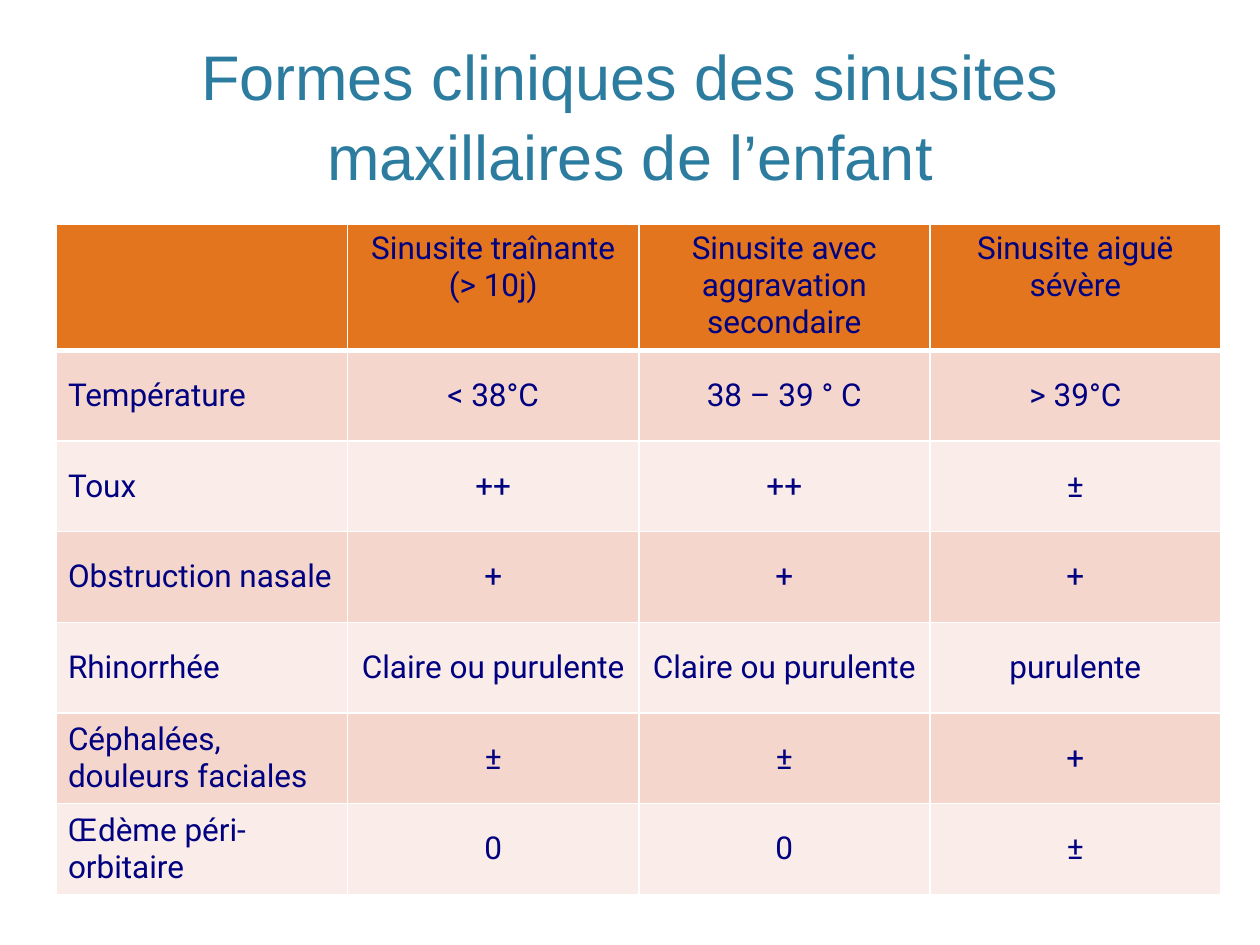
from lxml import etree
from pptx import Presentation
from pptx import util as u
from pptx.dml.color import RGBColor
from pptx.enum import text
from pptx.oxml.ns import qn

TITLE_BLUE, NAVY, WHITE = "2C7C9F", "000080", "FFFFFF"
HEADER_ORANGE = "E2751D"
BAND_FILLS = ["F4D6CD", "FAECE8"]

HEADERS = ["", "Sinusite traînante\n(> 10j)",
           "Sinusite avec aggravation secondaire", "Sinusite aiguë sévère"]
SIGNS = [
    ["Température", "< 38°C", "38 – 39 ° C", "> 39°C"],
    ["Toux", "++", "++", "±"],
    ["Obstruction nasale", "+", "+", "+"],
    ["Rhinorrhée", "Claire ou purulente", "Claire ou purulente", "purulente"],
    ["Céphalées, douleurs faciales", "±", "±", "+"],
    ["Œdème péri-orbitaire", "0", "0", "±"],
]
COLUMN_WIDTH, HEADER_HEIGHT, ROW_HEIGHT = 2.31, 1, 0.72


def color(hex_string):
    return RGBColor.from_string(hex_string)


def add_run(paragraph, words, size, font_name, hex_string):
    run = paragraph.add_run()
    run.text = words
    run.font.size = u.Pt(size)
    run.font.name = font_name
    run.font.color.rgb = color(hex_string)


def add_title(slide, words):
    title = slide.shapes.title
    title.left, title.top = u.Inches(0.6), u.Inches(0.12)
    title.width, title.height = u.Inches(8.8), u.Inches(1.46)
    frame = title.text_frame
    frame.word_wrap = True
    frame.auto_size = text.MSO_AUTO_SIZE.NONE
    frame.vertical_anchor = text.MSO_ANCHOR.BOTTOM
    paragraph = frame.paragraphs[0]
    paragraph.alignment = text.PP_ALIGN.CENTER
    paragraph.line_spacing = 1.05
    add_run(paragraph, words, 36, "Arial", TITLE_BLUE)


def set_borders(cell, bottom_width):
    """Draw white borders, 1 pt except for the bottom one."""
    properties = cell._tc.get_or_add_tcPr()
    widths = {"a:lnL": 1, "a:lnR": 1, "a:lnT": 1, "a:lnB": bottom_width}
    for position, (tag, width) in enumerate(widths.items()):
        line = etree.Element(qn(tag), w=str(u.Pt(width)))
        fill = etree.SubElement(line, qn("a:solidFill"))
        etree.SubElement(fill, qn("a:srgbClr"), val=WHITE)
        properties.insert(position, line)


def fill_cell(cell, words, fill, is_header, alignment):
    cell.fill.solid()
    cell.fill.fore_color.rgb = color(fill)
    set_borders(cell, 3 if is_header else 1)
    cell.margin_left = cell.margin_right = u.Inches(0.09)
    cell.margin_top = cell.margin_bottom = u.Inches(0.05)
    anchors = text.MSO_ANCHOR
    cell.vertical_anchor = anchors.TOP if is_header else anchors.MIDDLE
    frame = cell.text_frame
    for index, line in enumerate(words.split("\n")):
        paragraph = frame.add_paragraph() if index else frame.paragraphs[0]
        paragraph.alignment = alignment
        if line:
            add_run(paragraph, line, 18, "Roboto", NAVY)


def add_signs_table(slide):
    rows = [HEADERS] + SIGNS
    height = HEADER_HEIGHT + ROW_HEIGHT * len(SIGNS)
    table = slide.shapes.add_table(
        len(rows), len(HEADERS), u.Inches(0.45), u.Inches(1.78),
        u.Inches(COLUMN_WIDTH * len(HEADERS)), u.Inches(height)).table
    for column in table.columns:
        column.width = u.Inches(COLUMN_WIDTH)
    for row_index, row in enumerate(rows):
        is_header = row_index == 0
        table.rows[row_index].height = u.Inches(
            HEADER_HEIGHT if is_header else ROW_HEIGHT)
        fill = HEADER_ORANGE if is_header else BAND_FILLS[(row_index - 1) % 2]
        for column_index, words in enumerate(row):
            is_label = column_index == 0
            alignment = text.PP_ALIGN.LEFT if is_label else text.PP_ALIGN.CENTER
            fill_cell(table.cell(row_index, column_index), words, fill,
                      is_header, alignment)


def main():
    presentation = Presentation()
    presentation.slide_width = u.Inches(10)
    presentation.slide_height = u.Inches(7.5)
    slide = presentation.slides.add_slide(presentation.slide_layouts[5])
    add_title(slide, "Formes cliniques des sinusites maxillaires de l’enfant")
    add_signs_table(slide)
    presentation.save("out.pptx")


if __name__ == "__main__":
    main()
